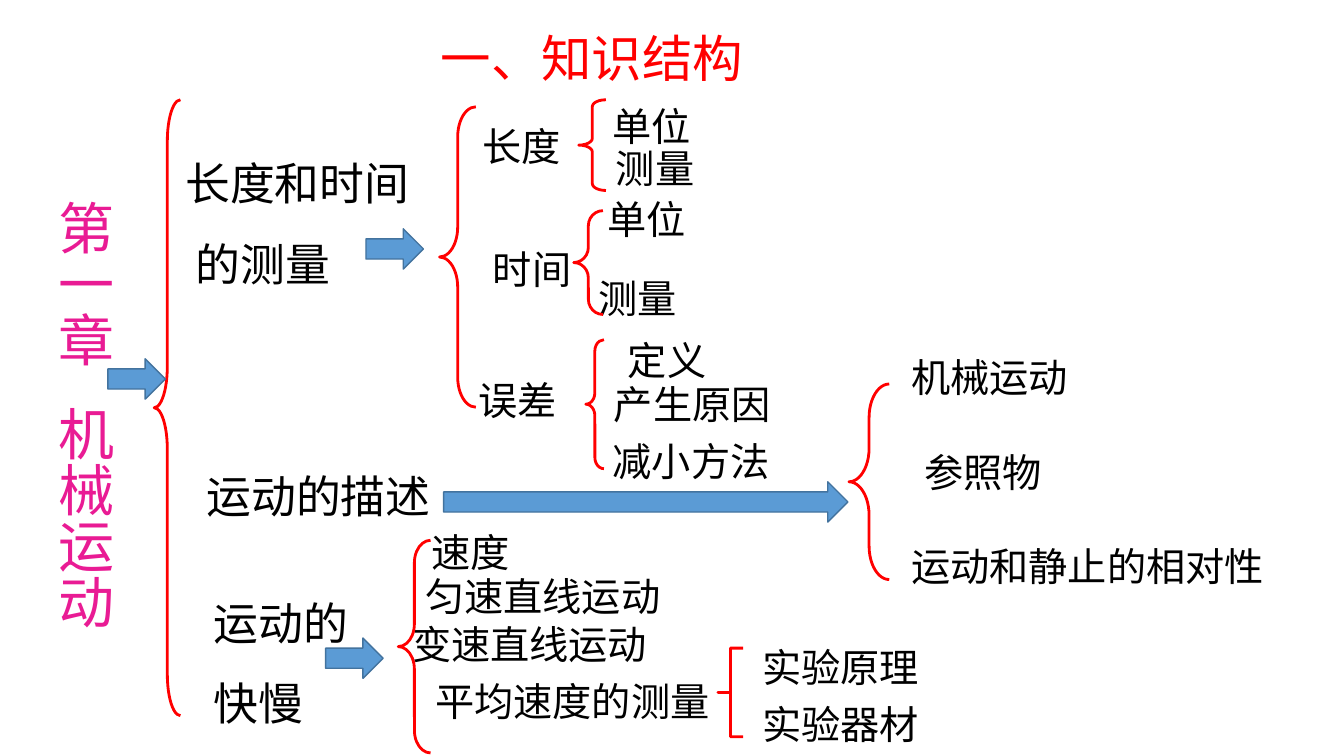
"""Build the knowledge-structure slide for the chapter on mechanical motion."""
import pptx
import pptx.dml.color
import pptx.enum.shapes
import pptx.enum.text
import pptx.oxml
import pptx.oxml.ns
import pptx.util

PX = 9144
FONT = "Noto Sans CJK SC"
COLORS = {
    "title": "FF0000",
    "chapter": "E91B94",
    "text": "000000",
    "brace": "FF0000",
    "arrow": "5B9BD5",
    "arrow_edge": "43739E",
}
SHAPES = pptx.enum.shapes.MSO_SHAPE


def rgb(name):
    return pptx.dml.color.RGBColor.from_string(COLORS[name])


def write(para, text, size=28, color="text", line_spacing=None):
    span = para.add_run()
    span.text = text
    span.font.name = FONT
    span.font.size = pptx.util.Pt(size)
    span.font.color.rgb = rgb(color)
    east_asian = pptx.oxml.parse_xml(
        f'<a:ea {pptx.oxml.ns.nsdecls("a")} typeface="{FONT}"/>')
    span.font._element.append(east_asian)
    if line_spacing:
        para.line_spacing = line_spacing
    return span


deck = pptx.Presentation()
deck.slide_width, deck.slide_height = 1333 * PX, 750 * PX
page = deck.slides.add_slide(deck.slide_layouts[5])

title = page.shapes.title
title.left, title.top, title.width, title.height = (
    n * PX for n in (427, 22, 375, 77))
title.text_frame.vertical_anchor = pptx.enum.text.MSO_ANCHOR.MIDDLE
title.text_frame.auto_size = pptx.enum.text.MSO_AUTO_SIZE.NONE
heading = title.text_frame.paragraphs[0]
heading.alignment = pptx.enum.text.PP_ALIGN.LEFT
write(heading, "一、知识结构", size=36, color="title", line_spacing=0.9)

chapter = page.shapes.add_textbox(*(n * PX for n in (35, 189, 87, 469)))
chapter.text_frame.word_wrap = True
chapter.text_frame._txBody.bodyPr.set("vert", "eaVert")
chapter_para = chapter.text_frame.paragraphs[0]
write(chapter_para, "第一章", size=40, color="chapter")
gap = write(chapter_para, " ", size=40, color="chapter")
gap.font._element.set("spc", "1800")
write(chapter_para, "机械运动", size=40, color="chapter")

sections = [
    (["长度和时间", " 的测量"], 174, 123, 246, 172),
    (["运动的描述"], 195, 433, 276, 91),
    (["运动的", "快慢"], 202, 559, 170, 172),
]
for lines, left, top, width, height in sections:
    box = page.shapes.add_textbox(left * PX, top * PX, width * PX, height * PX)
    box.text_frame.word_wrap = True
    para = box.text_frame.paragraphs[0]
    for index, line in enumerate(lines):
        if index:
            para.add_line_break()
        write(para, line, size=32, line_spacing=1.5)

topics = [
    ("长度", 469, 116, 105),
    ("单位", 598, 97, 124),
    ("测量", 601, 138, 111),
    ("时间", 479, 238, 99),
    ("单位", 593, 189, 134),
    ("测量", 584, 267, 129),
    ("误差", 465, 368, 105),
    ("定义", 613, 329, 133),
    ("产生原因", 599, 372, 205),
    ("减小方法", 598, 429, 296),
    ("机械运动", 894, 346, 213),
    ("参照物", 907, 440, 163),
    ("运动和静止的相对性", 894, 533, 396),
    ("速度", 418, 519, 102),
    ("匀速直线运动", 412, 563, 266),
    ("变速直线运动", 399, 610, 291),
    ("平均速度的测量", 422, 667, 300),
    ("实验原理", 746, 633, 189),
    ("实验器材", 746, 690, 205),
]
for text, left, top, width in topics:
    box = page.shapes.add_textbox(left * PX, top * PX, width * PX, 57 * PX)
    box.text_frame.word_wrap = True
    write(box.text_frame.paragraphs[0], text)

braces = [
    (153, 99, 26, 611, 1.58),
    (436, 106, 36, 298, 0.83),
    (574, 99, 27, 90, 0.25),
    (569, 209, 29, 103, 0.52),
    (581, 337, 18, 128, 0.62),
    (842, 381, 40, 194, 0.83),
    (395, 536, 32, 211, 0.7),
    (712, 643, 25, 88, 0),
]
for left, top, width, height, curve in braces:
    brace = page.shapes.add_shape(
        SHAPES.LEFT_BRACE, left * PX, top * PX, width * PX, height * PX)
    brace.adjustments[0] = curve
    brace.shadow.inherit = False
    brace.fill.background()
    brace.line.color.rgb = rgb("brace")
    brace.line.width = pptx.util.Pt(2)

arrows = [(107, 356, 57), (363, 227, 57), (440, 478, 401), (323, 633, 57)]
for left, top, width in arrows:
    arrow = page.shapes.add_shape(
        SHAPES.RIGHT_ARROW, left * PX, top * PX, width * PX, 40 * PX)
    arrow.shadow.inherit = False
    arrow.fill.solid()
    arrow.fill.fore_color.rgb = rgb("arrow")
    arrow.line.color.rgb = rgb("arrow_edge")
    arrow.line.width = pptx.util.Pt(1)

deck.save("out.pptx")
